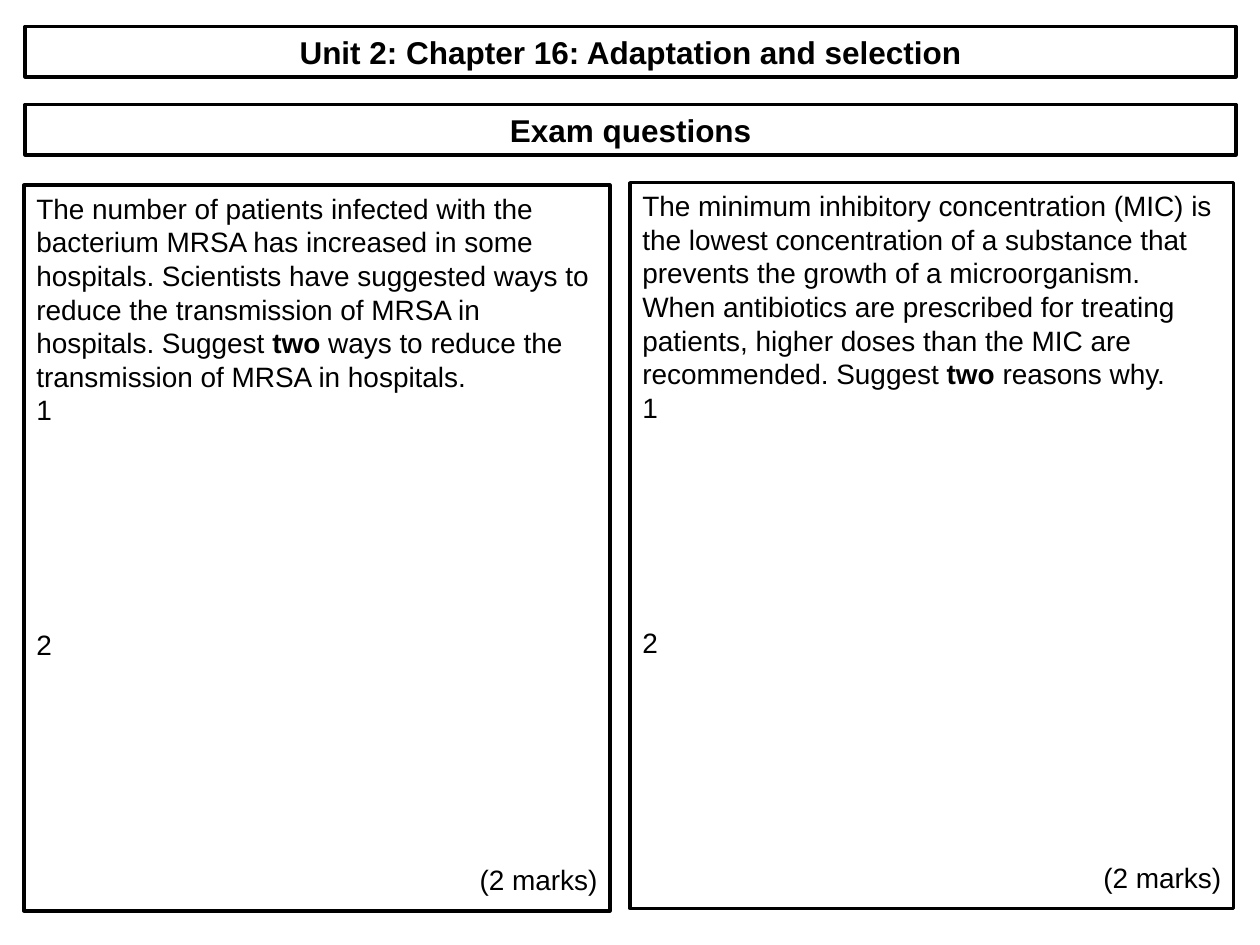
from pptx import Presentation
from pptx.dml.color import RGBColor
from pptx.enum.shapes import MSO_SHAPE as Shape
from pptx.enum.text import MSO_ANCHOR as Anchor, MSO_AUTO_SIZE as Fit, PP_ALIGN as Align
from pptx.util import Inches, Pt

HEADS = ["Unit 2: Chapter 16: Adaptation and selection", "Exam questions"]
TASKS = [
    ((0.19, 1.47, 4.65, 5.76), [
        "The number of patients infected with the bacterium MRSA has increased "
        "in some hospitals. Scientists have suggested ways to reduce the "
        "transmission of MRSA in hospitals. Suggest ",
        "two ",
        "ways to reduce the transmission of MRSA in hospitals."]),
    ((5, 1.45, 4.79, 5.76), [
        "The minimum inhibitory concentration (MIC) is the lowest concentration "
        "of a substance that prevents the growth of a microorganism. When "
        "antibiotics are prescribed for treating patients, higher doses than "
        "the MIC are recommended. Suggest ",
        "two ",
        "reasons why."]),
]
ROWS = [("1", Align.LEFT, 0), ("2", Align.LEFT, 115), ("(2 marks)", Align.RIGHT, 115)]


def color(code):
    return RGBColor.from_string(code)


def add_box(slide, place):
    box = slide.shapes.add_shape(Shape.RECTANGLE, *map(Inches, place))
    box.shadow.inherit = False
    box.fill.solid()
    box.fill.fore_color.rgb = color("FFFFFF")
    box.line.color.rgb = color("000000")
    box.line.width = Pt(2)
    frame = box.text_frame
    frame.word_wrap = True
    frame.auto_size = Fit.SHAPE_TO_FIT_TEXT
    frame.vertical_anchor = Anchor.TOP
    return frame


def add_run(para, text, size, bold=False):
    run = para.add_run()
    run.text = text
    run.font.name = "Arial"
    run.font.size = Pt(size)
    run.font.bold = bold
    run.font.color.rgb = color("000000")


def main():
    deck = Presentation()
    deck.slide_width, deck.slide_height = Inches(10), Inches(7.5)
    slide = deck.slides.add_slide(deck.slide_layouts[6])

    for i, head in enumerate(HEADS):
        para = add_box(slide, (0.2, 0.21 + 0.62 * i, 9.61, 0.4)).paragraphs[0]
        para.alignment = Align.CENTER
        add_run(para, head, 18, True)

    for place, parts in TASKS:
        frame = add_box(slide, place)
        para = frame.paragraphs[0]
        para.alignment = Align.LEFT
        for i, part in enumerate(parts):
            add_run(para, part, 16, i == 1)
        for text, align, gap in ROWS:
            para = frame.add_paragraph()
            para.alignment = align
            para.space_before = Pt(gap)
            add_run(para, text, 16)

    deck.save("out.pptx")


if __name__ == "__main__":
    main()
